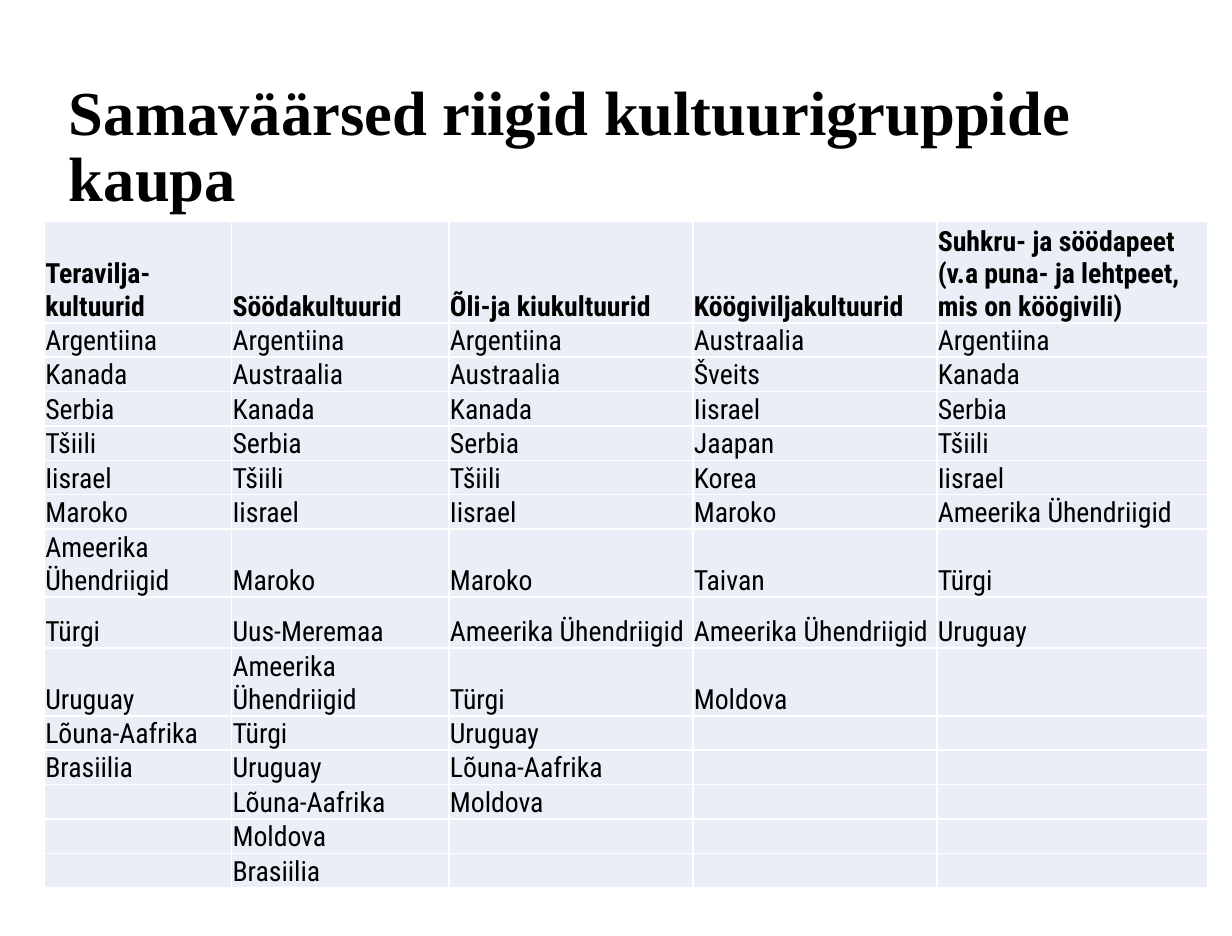
from itertools import zip_longest

from lxml import etree
from pptx import Presentation
from pptx.dml.color import RGBColor
from pptx.enum.text import MSO_ANCHOR
from pptx.oxml.ns import qn
from pptx.util import Cm, Pt

MIDDLE = MSO_ANCHOR.MIDDLE
BOTTOM = MSO_ANCHOR.BOTTOM

BLACK = "000000"
WHITE = "FFFFFF"
PALE_BLUE = "EAEFF7"

TITLE = "Samaväärsed riigid kultuurigruppide kaupa"
USA = "Ameerika Ühendriigid"
COUNTRIES_BY_CROP = {
    "Teravilja-kultuurid": [
        "Argentiina", "Kanada", "Serbia", "Tšiili", "Iisrael", "Maroko", USA,
        "Türgi", "Uruguay", "Lõuna-Aafrika", "Brasiilia"],
    "Söödakultuurid": [
        "Argentiina", "Austraalia", "Kanada", "Serbia", "Tšiili", "Iisrael",
        "Maroko", "Uus-Meremaa", USA, "Türgi", "Uruguay", "Lõuna-Aafrika",
        "Moldova", "Brasiilia"],
    "Õli-ja kiukultuurid": [
        "Argentiina", "Austraalia", "Kanada", "Serbia", "Tšiili", "Iisrael",
        "Maroko", USA, "Türgi", "Uruguay", "Lõuna-Aafrika", "Moldova"],
    "Köögiviljakultuurid": [
        "Austraalia", "Šveits", "Iisrael", "Jaapan", "Korea", "Maroko",
        "Taivan", USA, "Moldova"],
    "Suhkru- ja söödapeet (v.a puna- ja lehtpeet, mis on köögivili)": [
        "Argentiina", "Kanada", "Serbia", "Tšiili", "Iisrael", USA, "Türgi",
        "Uruguay"],
}
COLUMN_WIDTHS = [3.8, 4.41, 4.95, 4.95, 5.5]
HEADER_HEIGHT = 1.55
ROW_HEIGHT = 0.58
TALL_ROW, TALL_ROW_HEIGHT = 8, 1.04


def color(hex_string):
    return RGBColor.from_string(hex_string)


def format_paragraph(paragraph, font_name, size, bold, line_spacing):
    paragraph.line_spacing = line_spacing
    font = paragraph.font
    font.name = font_name
    font.size = Pt(size)
    font.bold = bold
    font.color.rgb = color(BLACK)


def add_title(slide):
    box = slide.shapes.add_textbox(Cm(1.4), Cm(1.44), Cm(22), Cm(3))
    frame = box.text_frame
    frame.word_wrap = True
    frame.vertical_anchor = MIDDLE
    frame.margin_left = frame.margin_right = frame.margin_bottom = 0
    frame.margin_top = Cm(0.15)
    frame.text = TITLE
    format_paragraph(frame.paragraphs[0], "Times New Roman", 36, True, 0.88)


def add_borders(cell):
    """Draw a thin white line on all four sides; borders must precede the fill."""
    properties = cell._tc.get_or_add_tcPr()
    for index, side in enumerate(("a:lnL", "a:lnR", "a:lnT", "a:lnB")):
        line = etree.Element(qn(side), w=str(Pt(1)))
        fill = etree.SubElement(line, qn("a:solidFill"))
        etree.SubElement(fill, qn("a:srgbClr"), val=WHITE)
        properties.insert(index, line)


def fill_cell(cell, text, bold):
    cell.fill.solid()
    cell.fill.fore_color.rgb = color(PALE_BLUE)
    add_borders(cell)
    cell.vertical_anchor = BOTTOM
    cell.margin_left = cell.margin_right = cell.margin_top = Cm(0.02)
    cell.margin_bottom = 0
    cell.text = text
    format_paragraph(cell.text_frame.paragraphs[0], "Roboto Condensed", 16, bold, 1.0)


def add_country_table(slide):
    rows = [list(COUNTRIES_BY_CROP)]
    rows += zip_longest(*COUNTRIES_BY_CROP.values(), fillvalue="")
    frame = slide.shapes.add_table(
        len(rows), len(COLUMN_WIDTHS), Cm(0.9), Cm(4.5), Cm(23.6), Cm(13.6))
    table = frame.table
    table.first_row = table.horz_banding = False
    for column, width in zip(table.columns, COLUMN_WIDTHS):
        column.width = Cm(width)
    for row_index, texts in enumerate(rows):
        table.rows[row_index].height = Cm(ROW_HEIGHT)
        for column_index, text in enumerate(texts):
            fill_cell(table.cell(row_index, column_index), text, row_index == 0)
    table.rows[0].height = Cm(HEADER_HEIGHT)
    table.rows[TALL_ROW].height = Cm(TALL_ROW_HEIGHT)


def main():
    presentation = Presentation()
    presentation.slide_width = Cm(25)
    presentation.slide_height = Cm(19)
    slide = presentation.slides.add_slide(presentation.slide_layouts[6])
    add_title(slide)
    add_country_table(slide)
    presentation.save("out.pptx")


if __name__ == "__main__":
    main()
